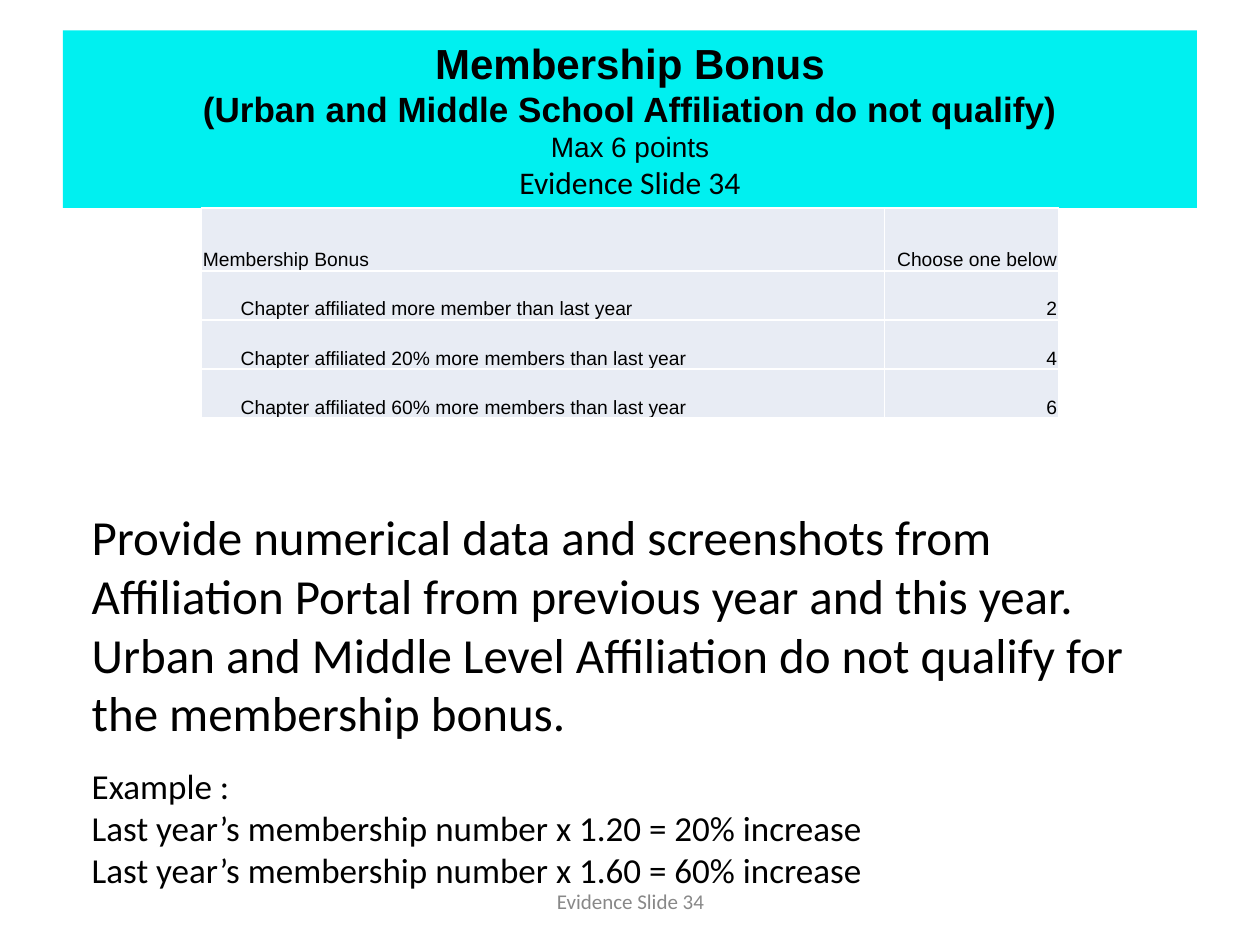
from lxml import etree
from pptx import Presentation
from pptx.dml.color import RGBColor as RGB
from pptx.enum.shapes import MSO_SHAPE as SHAPE
from pptx.enum.text import MSO_ANCHOR as ANCHOR, PP_ALIGN as ALIGN
from pptx.oxml.ns import qn
from pptx.util import Inches, Pt

HUES = {"cyan": "00F0F0", "cell": "E8ECF4", "line": "FFFFFF",
        "ink": "000000", "gray": "888888"}


def hue(name):
    return RGB.from_string(HUES[name])


def add_run(para, text, size, face="Calibri", bold=False, ink="ink"):
    run = para.add_run()
    run.text = text
    font = run.font
    font.size, font.name, font.bold = Pt(size), face, bold
    font.color.rgb = hue(ink)


def add_box(slide, box, anchor=ANCHOR.TOP):
    frame = slide.shapes.add_textbox(*map(Inches, box)).text_frame
    frame.word_wrap = True
    frame.vertical_anchor = anchor
    return frame


def add_title(slide, box):
    band = slide.shapes.add_shape(SHAPE.RECTANGLE, *map(Inches, box))
    band.shadow.inherit = False
    band.fill.solid()
    band.fill.fore_color.rgb = hue("cyan")
    band.line.fill.background()
    frame = band.text_frame
    frame.word_wrap = True
    frame.vertical_anchor = ANCHOR.MIDDLE
    para = frame.paragraphs[0]
    para.alignment = ALIGN.CENTER
    lines = [("Membership Bonus", 24, "Arial", True),
             ("(Urban and Middle School Affiliation do not qualify)", 20, "Arial", True),
             ("Max 6 points", 16, "Arial", False),
             ("Evidence Slide 34", 18, "Calibri", False)]
    for i, line in enumerate(lines):
        if i:
            para.add_line_break()
        add_run(para, *line)


def add_edges(cell):
    props = cell._tc.get_or_add_tcPr()
    for i, side in enumerate(("lnL", "lnR", "lnT", "lnB")):
        edge = etree.Element(qn(f"a:{side}"), w=str(Pt(1)))
        fill = etree.SubElement(edge, qn("a:solidFill"))
        etree.SubElement(fill, qn("a:srgbClr"), val=HUES["line"])
        props.insert(i, edge)  # borders come before the fill


def add_scores(slide, box):
    rows = [("Membership Bonus", "Choose one below"),
            ("Chapter affiliated more member than last year", "2"),
            ("Chapter affiliated 20% more members than last year", "4"),
            ("Chapter affiliated 60% more members than last year", "6")]
    table = slide.shapes.add_table(len(rows), 2, *map(Inches, box)).table
    for col, width in zip(table.columns, (5.42, 1.38)):
        col.width = Inches(width)
    for r, row in enumerate(rows):
        table.rows[r].height = Inches(0.39 if r else 0.5)
        for c, text in enumerate(row):
            cell = table.cell(r, c)
            cell.fill.solid()
            cell.fill.fore_color.rgb = hue("cell")
            cell.vertical_anchor = ANCHOR.BOTTOM
            # Criteria below the heading are indented
            cell.margin_left = Inches(0.31 if r and not c else 0.01)
            cell.margin_right = cell.margin_top = Inches(0.01)
            cell.margin_bottom = 0
            para = cell.text_frame.paragraphs[0]
            para.alignment = ALIGN.RIGHT if c else ALIGN.LEFT
            add_run(para, text, 11, "Arial")
            add_edges(cell)


def add_notes(slide, box):
    frame = add_box(slide, box)
    add_run(frame.paragraphs[0],
            "Provide numerical data and screenshots from Affiliation Portal "
            "from previous year and this year. Urban and Middle Level "
            "Affiliation do not qualify for the membership bonus.", 28)
    lines = ["Example :",
             "Last year’s membership number x 1.20 = 20% increase",
             "Last year’s membership number x 1.60 = 60% increase"]
    for i, line in enumerate(lines):
        para = frame.add_paragraph()
        para.space_before = Pt(0 if i else 13)
        add_run(para, line, 20)


def add_footer(slide, box):
    para = add_box(slide, box, ANCHOR.MIDDLE).paragraphs[0]
    para.alignment = ALIGN.CENTER
    add_run(para, "Evidence Slide 34", 12, ink="gray")


def main():
    deck = Presentation()
    deck.slide_width, deck.slide_height = Inches(10), Inches(7.5)
    slide = deck.slides.add_slide(deck.slide_layouts[6])
    add_title(slide, (0.5, 0.24, 9, 1.41))
    add_scores(slide, (1.6, 1.65, 6.8, 1.67))
    add_notes(slide, (0.63, 3.97, 8.73, 2.92))
    add_footer(slide, (3.42, 6.95, 3.17, 0.4))
    deck.save("out.pptx")


if __name__ == "__main__":
    main()
